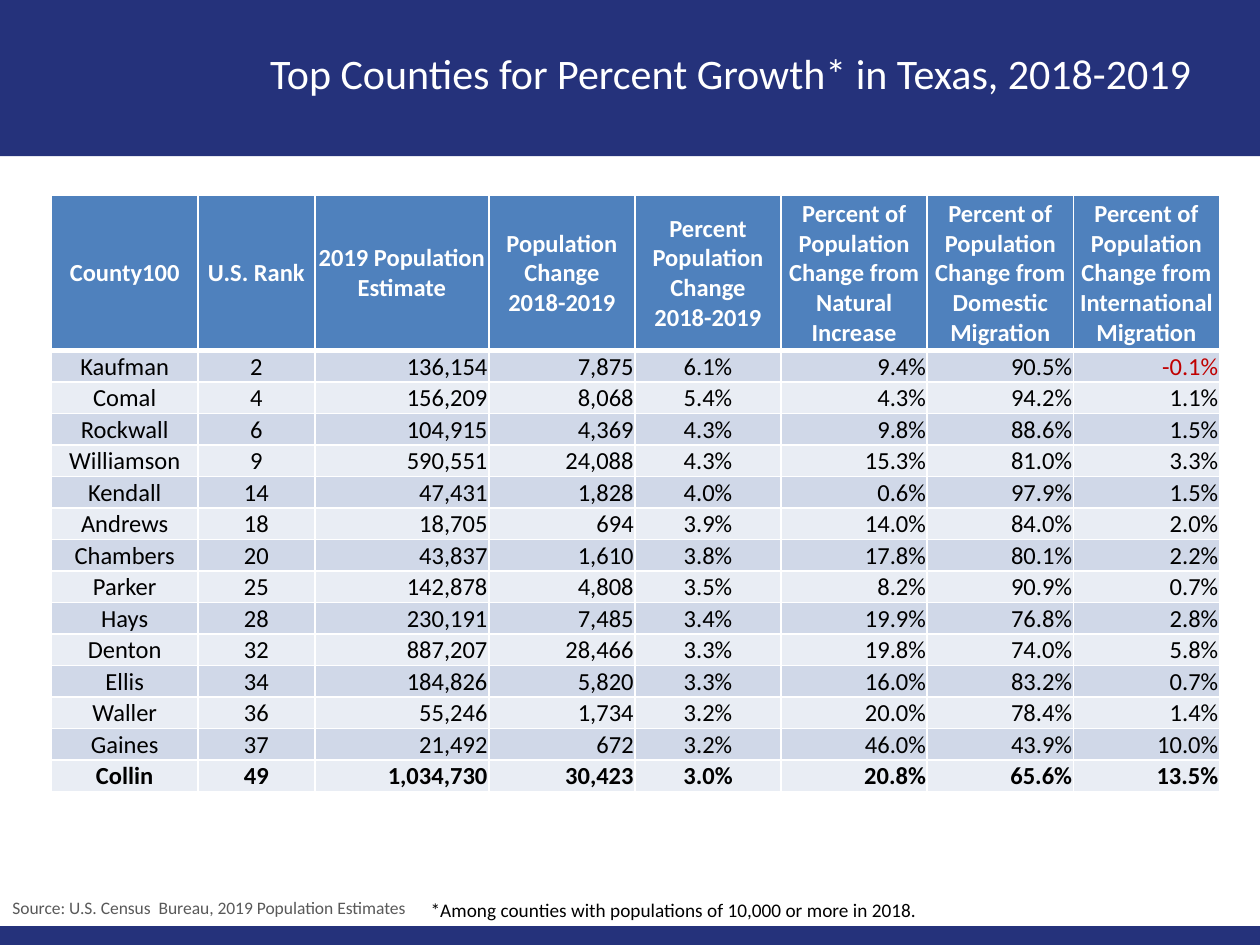
from dataclasses import dataclass

import lxml.etree
import pptx
import pptx.dml.color
import pptx.enum.shapes
import pptx.enum.text
import pptx.oxml.ns
import pptx.util

Inches = pptx.util.Inches
ALIGN = pptx.enum.text.PP_ALIGN
ANCHOR = pptx.enum.text.MSO_ANCHOR


@dataclass(frozen=True)
class Theme:
    font: str = "Calibri"
    navy: str = "25327B"
    header_blue: str = "4F81BD"
    bands: tuple = ("D0D8E8", "E9EDF4")
    white: str = "FFFFFF"
    black: str = "000000"
    grey: str = "595959"
    negative_red: str = "C00000"
    title_size: int = 24
    table_size: int = 14
    footnote_size: int = 11
    source_size: int = 10
    rule_width: int = 1
    header_rule_width: int = 3


THEME = Theme()

TITLE = "Top Counties for Percent Growth* in Texas, 2018-2019"
FOOTNOTE = "*Among counties with populations of 10,000 or more in 2018."
SOURCE = "Source: U.S. Census  Bureau, 2019 Population Estimates"

COLUMNS = [
    ("County100", 1.16, ALIGN.CENTER),
    ("U.S. Rank", 0.93, ALIGN.CENTER),
    ("2019 Population Estimate", 1.38, ALIGN.RIGHT),
    ("Population Change\n2018-2019", 1.16, ALIGN.RIGHT),
    ("Percent Population Change\n2018-2019", 1.16, ALIGN.CENTER),
    ("Percent of Population Change from Natural Increase", 1.16, ALIGN.RIGHT),
    ("Percent of Population Change from Domestic Migration", 1.16, ALIGN.RIGHT),
    ("Percent of Population Change from International Migration", 1.16, ALIGN.RIGHT),
]

COUNTIES = [
    ("Kaufman", "2", "136,154", "7,875", "6.1%", "9.4%", "90.5%", "-0.1%"),
    ("Comal", "4", "156,209", "8,068", "5.4%", "4.3%", "94.2%", "1.1%"),
    ("Rockwall", "6", "104,915", "4,369", "4.3%", "9.8%", "88.6%", "1.5%"),
    ("Williamson", "9", "590,551", "24,088", "4.3%", "15.3%", "81.0%", "3.3%"),
    ("Kendall", "14", "47,431", "1,828", "4.0%", "0.6%", "97.9%", "1.5%"),
    ("Andrews", "18", "18,705", "694", "3.9%", "14.0%", "84.0%", "2.0%"),
    ("Chambers", "20", "43,837", "1,610", "3.8%", "17.8%", "80.1%", "2.2%"),
    ("Parker", "25", "142,878", "4,808", "3.5%", "8.2%", "90.9%", "0.7%"),
    ("Hays", "28", "230,191", "7,485", "3.4%", "19.9%", "76.8%", "2.8%"),
    ("Denton", "32", "887,207", "28,466", "3.3%", "19.8%", "74.0%", "5.8%"),
    ("Ellis", "34", "184,826", "5,820", "3.3%", "16.0%", "83.2%", "0.7%"),
    ("Waller", "36", "55,246", "1,734", "3.2%", "20.0%", "78.4%", "1.4%"),
    ("Gaines", "37", "21,492", "672", "3.2%", "46.0%", "43.9%", "10.0%"),
    ("Collin", "49", "1,034,730", "30,423", "3.0%", "20.8%", "65.6%", "13.5%"),
]
HIGHLIGHTED_COUNTY = "Collin"
HEADER_HEIGHT = 1.23
ROW_HEIGHT = 0.25


def rgb(color):
    return pptx.dml.color.RGBColor.from_string(color)


def write_text(frame, text, size, color, align=ALIGN.LEFT, bold=False, spacing=None):
    frame.text = text
    for paragraph in frame.paragraphs:
        paragraph.alignment = align
        if spacing:
            paragraph.line_spacing = spacing
        paragraph.font.name = THEME.font
        paragraph.font.size = pptx.util.Pt(size)
        paragraph.font.bold = bold
        paragraph.font.color.rgb = rgb(color)


def add_band(slide, top, height):
    band = slide.shapes.add_shape(
        pptx.enum.shapes.MSO_SHAPE.RECTANGLE,
        Inches(0), Inches(top), Inches(10), Inches(height))
    band.shadow.inherit = False
    band.fill.solid()
    band.fill.fore_color.rgb = rgb(THEME.navy)
    band.line.fill.background()


def add_label(slide, box, text, size, color, anchor=ANCHOR.TOP, **style):
    label = slide.shapes.add_textbox(*map(Inches, box))
    label.text_frame.word_wrap = True
    label.text_frame.vertical_anchor = anchor
    write_text(label.text_frame, text, size, color, **style)


def add_border(cell, side, width):
    properties = cell._tc.get_or_add_tcPr()
    qn = pptx.oxml.ns.qn
    line = lxml.etree.SubElement(
        properties, qn(f"a:ln{side}"), w=str(pptx.util.Pt(width)))
    fill = lxml.etree.SubElement(line, qn("a:solidFill"))
    lxml.etree.SubElement(fill, qn("a:srgbClr"), val=THEME.white)


def fill_cell(cell, text, fill, color, align, anchor, bold,
              top_rule=THEME.rule_width, bottom_rule=THEME.rule_width):
    cell.margin_left = cell.margin_right = cell.margin_top = Inches(0.01)
    cell.margin_bottom = Inches(0)
    cell.vertical_anchor = anchor
    rules = {"L": THEME.rule_width, "R": THEME.rule_width,
             "T": top_rule, "B": bottom_rule}
    for side, width in rules.items():
        add_border(cell, side, width)
    cell.fill.solid()
    cell.fill.fore_color.rgb = rgb(fill)
    write_text(cell.text_frame, text, THEME.table_size, color, align, bold)


def add_county_table(slide):
    width = sum(column_width for _, column_width, _ in COLUMNS)
    height = HEADER_HEIGHT + ROW_HEIGHT * len(COUNTIES)
    table = slide.shapes.add_table(
        len(COUNTIES) + 1, len(COLUMNS),
        Inches(0.41), Inches(1.55), Inches(width), Inches(height)).table
    table.rows[0].height = Inches(HEADER_HEIGHT)

    for column, (heading, column_width, _) in enumerate(COLUMNS):
        table.columns[column].width = Inches(column_width)
        fill_cell(table.cell(0, column), heading, THEME.header_blue, THEME.white,
                  ALIGN.CENTER, ANCHOR.MIDDLE, True,
                  bottom_rule=THEME.header_rule_width)

    for row, county in enumerate(COUNTIES, start=1):
        table.rows[row].height = Inches(ROW_HEIGHT)
        band = THEME.bands[(row - 1) % 2]
        top_rule = THEME.header_rule_width if row == 1 else THEME.rule_width
        for column, value in enumerate(county):
            color = THEME.negative_red if value.startswith("-") else THEME.black
            fill_cell(table.cell(row, column), value, band, color,
                      COLUMNS[column][2], ANCHOR.BOTTOM,
                      county[0] == HIGHLIGHTED_COUNTY, top_rule=top_rule)


def main():
    deck = pptx.Presentation()
    deck.slide_width = Inches(10)
    deck.slide_height = Inches(7.5)
    slide = deck.slides.add_slide(deck.slide_layouts[6])

    add_band(slide, 0, 1.24)
    add_band(slide, 7.35, 0.15)
    add_label(slide, (1.7, 0.1, 8.2, 1), TITLE, THEME.title_size, THEME.white,
              ANCHOR.MIDDLE, align=ALIGN.CENTER, spacing=0.9)
    add_county_table(slide)
    add_label(slide, (3.32, 7.08, 6.83, 0.29), FOOTNOTE,
              THEME.footnote_size, THEME.black)
    add_label(slide, (0, 7.06, 5, 0.28), SOURCE,
              THEME.source_size, THEME.grey, spacing=1.07)

    deck.save("out.pptx")


if __name__ == "__main__":
    main()
